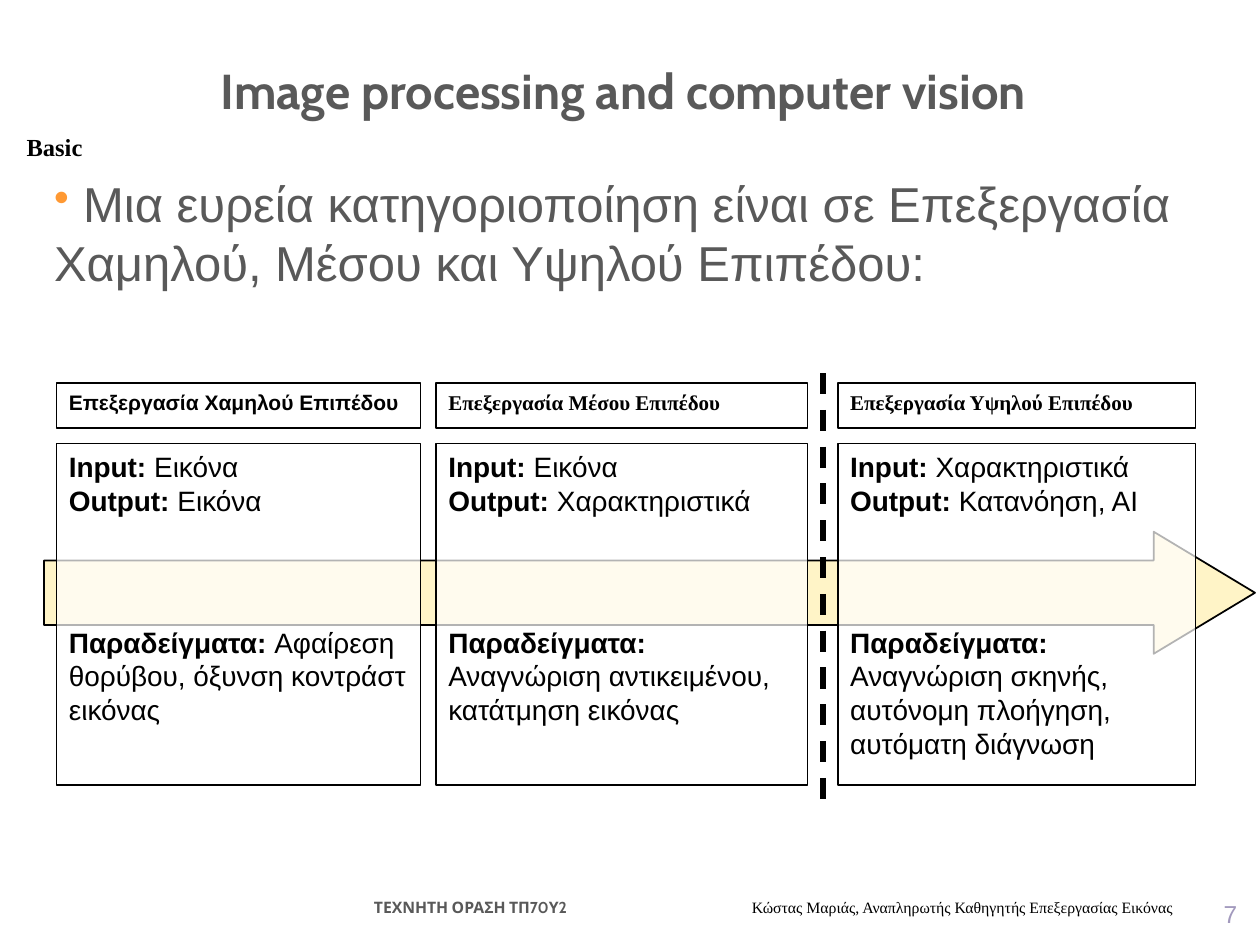
from dataclasses import dataclass

from lxml import etree
from pptx import Presentation
from pptx.dml import color
from pptx.enum import dml, shapes, text
from pptx.oxml import ns
from pptx.util import Cm, Pt


@dataclass(frozen=True)
class Theme:
    ink: str = "000000"
    grey: str = "595959"
    lilac: str = "A299BD"
    orange: str = "FF9933"
    white: str = "FFFFFF"
    cream: str = "FFF4C7"
    sans: str = "Arial"
    serif: str = "Times New Roman"
    display: str = "Cabin"
    big: int = 28
    level: int = 16
    small: int = 14
    heading: int = 12
    footer: int = 9


T = Theme()

# left, width, heading, heading font, input, output, examples
LEVELS = [
    (1.14, 7.34, "Επεξεργασία Χαμηλού Επιπέδου", T.sans,
     "Εικόνα", "Εικόνα", "Αφαίρεση θορύβου, όξυνση κοντράστ εικόνας"),
    (8.79, 7.49, "Επεξεργασία Μέσου Επιπέδου", T.serif,
     "Εικόνα", "Χαρακτηριστικά", "Αναγνώριση αντικειμένου, κατάτμηση εικόνας"),
    (16.89, 7.21, "Επεξεργασία Υψηλού Επιπέδου", T.serif,
     "Χαρακτηριστικά", "Κατανόηση, ΑΙ",
     "Αναγνώριση σκηνής, αυτόνομη πλοήγηση, αυτόματη διάγνωση"),
]


def rgb(value):
    return color.RGBColor.from_string(value)


def add_element(parent, tag, **attributes):
    return etree.SubElement(parent, ns.qn(tag), **attributes)


def style(font, size, name=T.sans, fill=T.ink, bold=None):
    font.size, font.name, font.bold = Pt(size), name, bold
    font.color.rgb = rgb(fill)


def add_run(p, words, bold):
    r = p.add_run()
    r.text, r.font.bold = words, bold
    return r


def add_text(s, box, words="", align=text.PP_ALIGN.LEFT,
             anchor=text.MSO_ANCHOR.TOP):
    """Add a wrapped text box and return its first paragraph."""
    tf = s.shapes.add_textbox(*map(Cm, box)).text_frame
    tf.word_wrap, tf.vertical_anchor = True, anchor
    p = tf.paragraphs[0]
    p.text, p.alignment = words, align
    return p


def add_outlined(s, kind, box, fill):
    sp = s.shapes.add_shape(kind, *map(Cm, box))
    sp.shadow.inherit = False
    sp.fill.solid()
    sp.fill.fore_color.rgb = rgb(fill)
    sp.line.color.rgb = rgb(T.ink)
    sp.line.width = Pt(1)
    return sp


def add_panel(s, box):
    """Add a 70% opaque white rectangle and return its text frame."""
    sp = add_outlined(s, shapes.MSO_SHAPE.RECTANGLE, box, T.white)
    fill = sp.fill.fore_color._xFill.find(ns.qn("a:srgbClr"))
    add_element(fill, "a:alpha", val="70000")
    tf = sp.text_frame
    tf.word_wrap, tf.vertical_anchor = True, text.MSO_ANCHOR.TOP
    return tf


def add_level(s, left, width, heading, font, source, result, examples):
    p = add_panel(s, (left, 7.72, width, 0.91)).paragraphs[0]
    p.text, p.alignment = heading, text.PP_ALIGN.LEFT
    style(p.font, T.heading, font, bold=True)

    tf = add_panel(s, (left, 8.94, width, 6.88))
    p = tf.paragraphs[0]
    add_run(p, "Input: ", True)
    add_run(p, source, False)
    p.add_line_break()
    add_run(p, "Output: ", True)
    add_run(p, result, False)
    p = tf.add_paragraph()
    p.space_before = Pt(62)
    add_run(p, "Παραδείγματα: ", True)
    add_run(p, examples, False)
    for p in tf.paragraphs:
        p.alignment = text.PP_ALIGN.LEFT
        style(p.font, T.level)


def add_divider(s, x, top, bottom):
    line = s.shapes.add_connector(shapes.MSO_CONNECTOR.STRAIGHT,
                                  Cm(x), Cm(top), Cm(x), Cm(bottom))
    line.line.color.rgb = rgb(T.ink)
    line.line.width = Pt(3)
    line.line.dash_style = dml.MSO_LINE.DASH
    add_element(line._element.spPr, "a:effectLst")


def add_footer(s):
    p = add_text(s, (21.46, 18.06, 3.73, 0.79), "7",
                 text.PP_ALIGN.RIGHT, text.MSO_ANCHOR.BOTTOM)
    style(p.font, T.small, fill=T.lilac)

    p = add_text(s, (7.29, 17.98, 17.25, 0.64))
    tabs = add_element(p._p.get_or_add_pPr(), "a:tabLst")
    add_element(tabs, "a:tab", pos=str(Cm(7.62)), algn="l")
    course = add_run(p, "ΤΕΧΝΗΤΗ ΟΡΑΣΗ ΤΠ70Υ2\t", True)
    style(course.font, T.footer, T.display, T.grey, True)
    author = add_run(
        p, "Κώστας Μαριάς, Αναπληρωτής Καθηγητής Επεξεργασίας Εικόνας", False)
    style(author.font, T.footer, T.serif, bold=False)


def add_intro(s):
    p = add_text(s, (0.84, 3.38, 23.7, 3.2),
                 " Μια ευρεία κατηγοριοποίηση είναι σε Επεξεργασία "
                 "Χαμηλού, Μέσου και Υψηλού Επιπέδου:")
    pPr = p._p.get_or_add_pPr()
    pPr.set("marL", "0")
    pPr.set("indent", "0")
    add_element(add_element(pPr, "a:buClr"), "a:srgbClr", val=T.orange)
    add_element(pPr, "a:buSzPct", val="90000")
    add_element(pPr, "a:buChar", char="•")
    style(p.font, T.big, fill=T.grey)


def main():
    prs = Presentation()
    prs.slide_width, prs.slide_height = Cm(25.4), Cm(19.05)
    s = prs.slides.add_slide(prs.slide_layouts[6])

    add_footer(s)
    arrow = add_outlined(s, shapes.MSO_SHAPE.RIGHT_ARROW,
                         (0.89, 10.72, 24.41, 2.46), T.cream)
    arrow.adjustments[0], arrow.adjustments[1] = 0.53, 0.83

    p = add_text(s, (0.43, 0.64, 24.49, 1.9),
                 "Image processing and computer vision ",
                 text.PP_ALIGN.CENTER, text.MSO_ANCHOR.BOTTOM)
    style(p.font, T.big, T.display, T.grey, True)
    add_intro(s)

    for level in LEVELS:
        add_level(s, *level)
    add_divider(s, 16.59, 7.52, 16.1)

    p = add_text(s, (-0.08, 2.21, 2.36, 1.17), "Basic",
                 text.PP_ALIGN.CENTER, text.MSO_ANCHOR.BOTTOM)
    style(p.font, T.small, T.serif, bold=True)

    prs.save("out.pptx")


if __name__ == "__main__":
    main()
